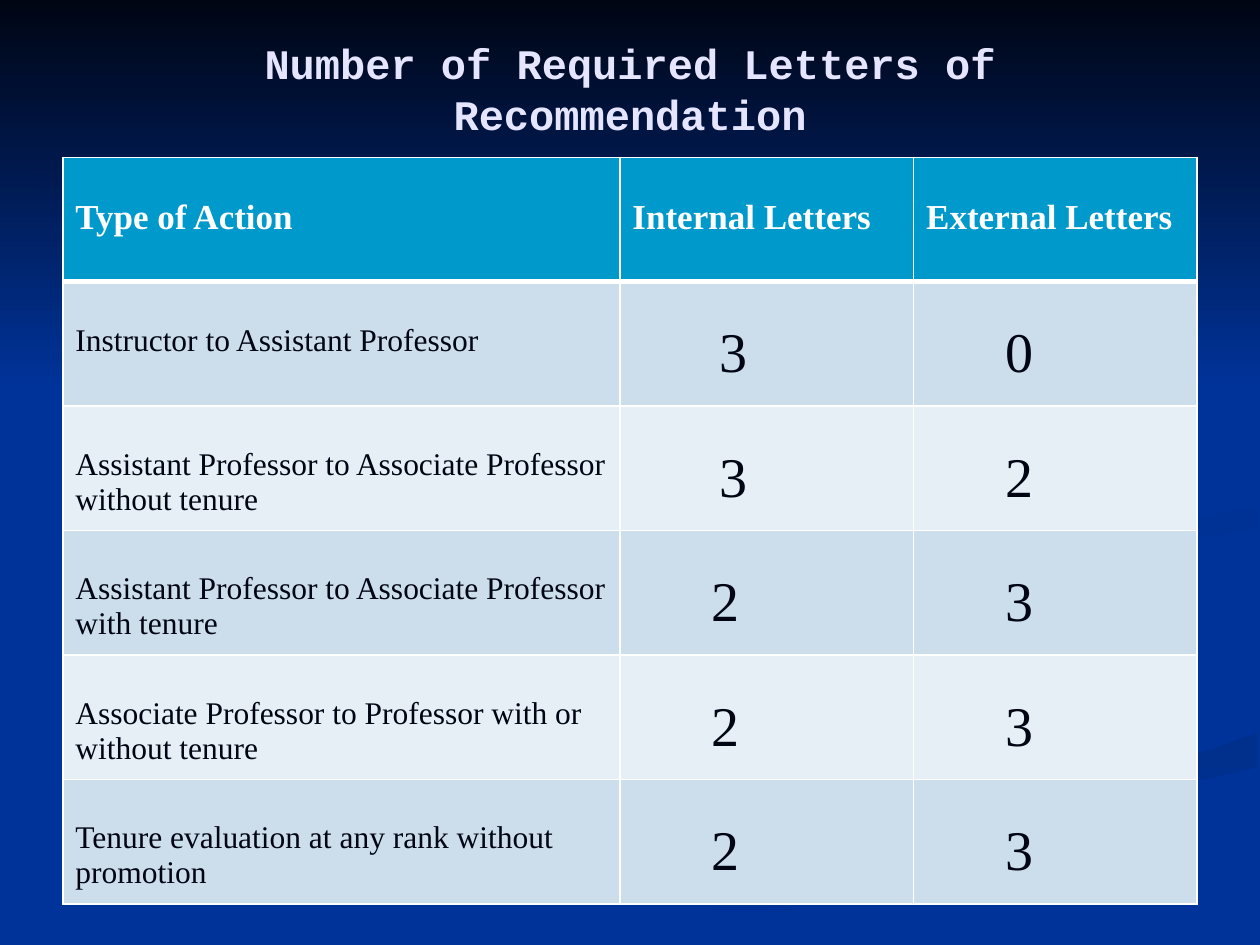
from dataclasses import dataclass

from lxml import etree
from pptx import Presentation
from pptx.dml.color import RGBColor
from pptx.enum.text import MSO_ANCHOR, PP_ALIGN
from pptx.oxml.ns import qn
from pptx.util import Cm, Pt

CENTER = PP_ALIGN.CENTER
MIDDLE = MSO_ANCHOR.MIDDLE
TOP = MSO_ANCHOR.TOP


@dataclass(frozen=True)
class Theme:
    blue: str = "003399"
    night: str = "000514"
    pale: str = "E5E5FF"
    white: str = "FFFFFF"
    head: str = "0099CC"
    bands: tuple = ("CCDEEC", "E7EFF6")
    mono: str = "Courier New"
    serif: str = "Times New Roman"
    title_size: int = 24
    head_size: int = 20
    body_size: int = 18
    digit_size: int = 32


class Deck:
    def __init__(self, theme):
        self.theme = theme
        self.show = Presentation()
        self.show.slide_width, self.show.slide_height = Cm(25.4), Cm(19.05)
        self.slide = self.show.slides.add_slide(self.show.slide_layouts[6])
        self.paint(self.slide.background.fill, theme.blue)

    def paint(self, fill, color):
        fill.solid()
        fill.fore_color.rgb = RGBColor.from_string(color)

    def style(self, para, font, size, color, bold=False):
        for run in para.runs:
            run.font.name, run.font.size, run.font.bold = font, Pt(size), bold
            run.font.color.rgb = RGBColor.from_string(color)

    def swirl(self, points, start, end, angle=0):
        """Closed outline in cm; the angle runs clockwise."""
        grid = [(round(x * 100), round(y * 100)) for x, y in points]
        pen = self.slide.shapes.build_freeform(*grid[0], scale=Cm(0.01))
        pen.add_line_segments(grid[1:], close=True)
        shape = pen.convert_to_shape()
        shape.shadow.inherit = False
        shape.line.fill.background()
        if start == end:
            self.paint(shape.fill, start)
            return
        shape.fill.gradient()
        shape.fill.gradient_angle = (360 - angle) % 360
        for stop, color in zip(shape.fill.gradient_stops, (start, end)):
            stop.color.rgb = RGBColor.from_string(color)

    def title(self, text, left, top, width, height):
        box = self.slide.shapes.add_textbox(Cm(left), Cm(top), Cm(width), Cm(height))
        frame = box.text_frame
        frame.word_wrap = True
        frame.vertical_anchor = MIDDLE
        frame.margin_left = frame.margin_right = Cm(0.5)
        frame.margin_top, frame.margin_bottom = Cm(0), Cm(0.89)
        frame.text = text
        para = frame.paragraphs[0]
        para.alignment = CENTER
        self.style(para, self.theme.mono, self.theme.title_size, self.theme.pale, True)

    def border(self, cell, widths):
        props = cell._tc.get_or_add_tcPr()
        for spot, (side, width) in enumerate(zip("LRTB", widths)):
            line = etree.Element(qn(f"a:ln{side}"), w=str(Pt(width)))
            fill = etree.SubElement(line, qn("a:solidFill"))
            etree.SubElement(fill, qn("a:srgbClr"), val=self.theme.white)
            props.insert(spot, line)

    def cell(self, cell, text, fill, size, color, bold, indent, widths):
        cell.text_frame.text = text
        cell.vertical_anchor = TOP
        cell.margin_left, cell.margin_right = Cm(indent), Cm(0.25)
        cell.margin_top, cell.margin_bottom = Cm(0.83), Cm(0.1)
        self.style(cell.text_frame.paragraphs[0], self.theme.serif, size, color, bold)
        self.paint(cell.fill, fill)
        self.border(cell, widths)

    def table(self, rows, left, top, cols, height):
        look = self.theme
        frame = self.slide.shapes.add_table(
            len(rows), len(cols), Cm(left), Cm(top), Cm(sum(cols)), Cm(height * len(rows)))
        grid = frame.table
        for col, width in zip(grid.columns, cols):
            col.width = Cm(width)
        for r, row in enumerate(rows):
            grid.rows[r].height = Cm(height)
            for c, text in enumerate(row):
                cell = grid.cell(r, c)
                if r == 0:
                    self.cell(cell, text, look.head, look.head_size, look.white,
                              True, 0.25, (1, 1, 1, 3))
                    continue
                size = look.digit_size if c else look.body_size
                indent = 0.25 if c == 0 else 2 if c == 1 and r < 3 else 1.84
                self.cell(cell, text, look.bands[(r - 1) % 2], size, look.night,
                          False, indent, (1, 1, 3 if r == 1 else 1, 1))


# Backdrop outlines: points, first colour, last colour, angle
SWIRLS = [
    ([(19.84, 14.05), (17.32, 13.18), (15.6, 12.6), (14.6, 11.68), (14.48, 11.99),
      (15.29, 12.57), (17.25, 13.18), (19.35, 13.89), (19.96, 14.38), (19.48, 14.91),
      (18.14, 15.37), (15.65, 15.98), (12.67, 16.79), (9.55, 17.96), (7.62, 19.02),
      (9.17, 19.02), (11.84, 17.78), (15.09, 16.66), (18.31, 15.82), (19.81, 15.37),
      (20.32, 14.76), (20.12, 14.25)], "003399", "003193", 0),
    ([(23.95, 14.48), (23.34, 13.89), (22.1, 13.46), (20.12, 12.93), (18.92, 12.45),
      (18.39, 11.79), (18.62, 12.4), (19.46, 13), (21.29, 13.61), (22.66, 14.05),
      (23.32, 14.76), (22.71, 15.37), (23.67, 14.96)], "003399", "003193", 45),
    ([(12.78, 19.02), (14.5, 19.02), (16, 18.26), (18.34, 17.32), (20.85, 16.54),
      (22.94, 16), (25.35, 15.47), (25.35, 14.76), (24.46, 15.09), (22.94, 15.49),
      (20.24, 16.21), (17.68, 16.99), (15.21, 17.93), (13.18, 18.97)],
     "002F8C", "003399", 90),
    ([(18.42, 11.79), (18.92, 12.45), (20.62, 13.08), (22.99, 13.72), (23.95, 14.48),
      (23.52, 15.06), (21.41, 15.7), (17.88, 16.64), (14.55, 17.86), (12.12, 19.02),
      (12.78, 19.02), (13.18, 18.97), (15.21, 17.93), (17.68, 16.99), (20.24, 16.21),
      (22.94, 15.49), (24.46, 15.09), (25.37, 14.76), (25.37, 13.67), (23.44, 13.28),
      (21.13, 12.65), (19.96, 12.01), (19.86, 11.68), (20.6, 11.1), (21.97, 10.77),
      (24.59, 10.39), (25.37, 10.21), (25.37, 9.83), (23.93, 10.13), (21.08, 10.54),
      (19.18, 10.97)], "003399", "003399", 0),
    ([(19.84, 11.68), (20.09, 12.14), (20.98, 12.6), (20.45, 12.09), (20.73, 11.66),
      (21.82, 11.25), (23.77, 10.9), (25.35, 10.67), (25.35, 10.21), (23.7, 10.54),
      (21.97, 10.77), (20.57, 11.1)], "003091", "003399", 45),
    ([(17.35, 10.92), (19.96, 10.46), (21.72, 9.93), (22.58, 9.19), (22.61, 8.23),
      (21.69, 7.19), (19.35, 5.92), (20.98, 6.76), (22.25, 7.77), (22.58, 8.51),
      (21.87, 9.4), (20.09, 9.96), (17.17, 10.52), (15.16, 11.1), (14.66, 11.73),
      (15.8, 12.7), (15.06, 11.94), (15.85, 11.28)], "002F8E", "003399", 45),
    ([(0, 0), (0, 7.82), (25.4, 7.82), (25.4, 0)], "000514", "003399", 90),
]

ROWS = [
    ("Type of Action", "Internal Letters", "External Letters"),
    ("Instructor to Assistant Professor", "3", "0"),
    ("Assistant Professor to Associate Professor without tenure", "3", "2"),
    ("Assistant Professor to Associate Professor with tenure", "2", "3"),
    ("Associate Professor to Professor with or without tenure", "2", "3"),
    ("Tenure evaluation at any rank without promotion", "2", "3"),
]


def main():
    deck = Deck(Theme())
    # Backdrop
    for swirl in SWIRLS:
        deck.swirl(*swirl)
    # Title
    deck.title("Number of Required Letters of Recommendation", 1.27, 1.27, 22.86, 1.9)
    # Letters table
    deck.table(ROWS, 1.27, 3.17, (11.23, 5.92, 5.71), 2.51)
    deck.show.save("out.pptx")


if __name__ == "__main__":
    main()
